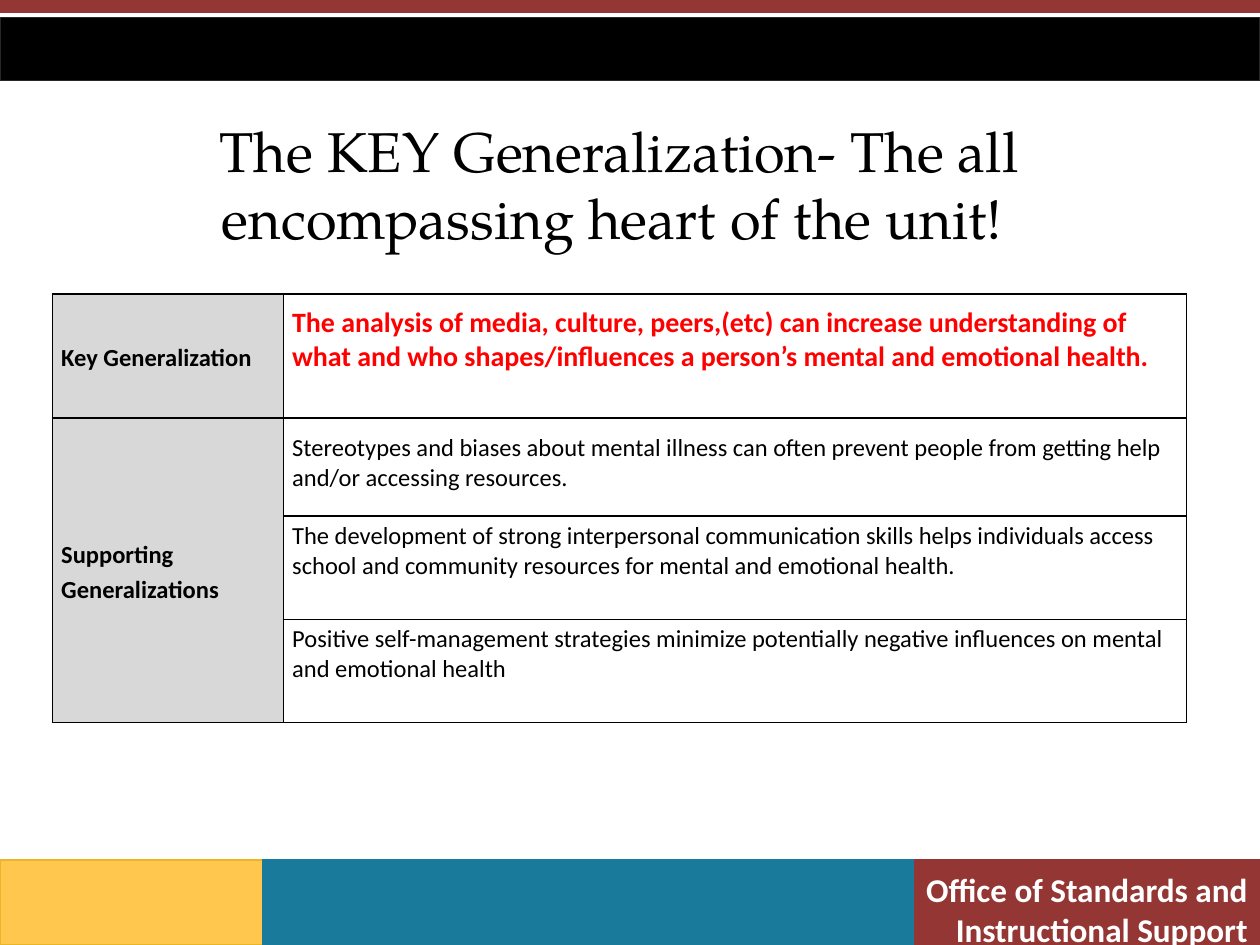
from dataclasses import dataclass
from lxml.etree import SubElement
from pptx import Presentation
from pptx.dml.color import RGBColor
from pptx.enum.shapes import MSO_SHAPE
from pptx.enum.text import MSO_ANCHOR, PP_ALIGN
from pptx.oxml.ns import qn
from pptx.util import Pt


@dataclass(frozen=True)
class Theme:
    black: str = "000000"
    white: str = "FFFFFF"
    edge: str = "272727"
    red: str = "943634"
    gold: str = "FFC74E"
    amber: str = "EAB629"
    teal: str = "197A9B"
    gray: str = "D8D8D8"
    alert: str = "FF0000"
    sans: str = "Calibri"
    serif: str = "TeX Gyre Pagella"
    title: int = 32
    foot: int = 19
    key: int = 16
    body: int = 14


theme = Theme()


def write(frame, text, size=theme.body, color=theme.black, font=theme.sans,
          bold=False, align=PP_ALIGN.LEFT, space=1.0):
    frame.word_wrap = True
    for i, line in enumerate(text.split("\n")):
        para = frame.paragraphs[0] if i == 0 else frame.add_paragraph()
        para.alignment = align
        para.line_spacing = space
        run = para.add_run()
        run.text = line
        run.font.size = Pt(size)
        run.font.name = font
        run.font.bold = bold
        run.font.color.rgb = RGBColor.from_string(color)


def outline(cell):
    props = cell._tc.get_or_add_tcPr()
    for i, side in enumerate(("lnL", "lnR", "lnT", "lnB")):
        line = props.makeelement(qn(f"a:{side}"), {"w": str(Pt(1))})
        fill = SubElement(line, qn("a:solidFill"))
        SubElement(fill, qn("a:srgbClr"), val=theme.black)
        props.insert(i, line)


deck = Presentation()
deck.slide_width, deck.slide_height = Pt(720), Pt(540)
slide = deck.slides.add_slide(deck.slide_layouts[6])
shapes = slide.shapes

bands = [
    (522, 491.5, 198, 48.5, theme.red, theme.red),
    (0, 491.5, 150, 48.5, theme.gold, theme.amber),
    (150, 491.5, 372, 48.5, theme.teal, theme.teal),
    (0, 0, 720, 7, theme.red, theme.red),
    (0, 10, 720, 36, theme.black, theme.edge),
]
for *place, fill, line in bands:
    band = shapes.add_shape(MSO_SHAPE.RECTANGLE, *map(Pt, place))
    band.shadow.inherit = False
    band.fill.solid()
    band.fill.fore_color.rgb = RGBColor.from_string(fill)
    band.line.color.rgb = RGBColor.from_string(line)
    band.line.width = Pt(0.75)

foot = shapes.add_textbox(Pt(246), Pt(491.5), Pt(474), Pt(48.5)).text_frame
foot.margin_top = Pt(5.5)
write(foot, "Office of Standards and\nInstructional Support", size=theme.foot,
      color=theme.white, bold=True, align=PP_ALIGN.RIGHT)

title = shapes.add_textbox(Pt(30), Pt(60), Pt(648), Pt(90)).text_frame
title.vertical_anchor = MSO_ANCHOR.MIDDLE
write(title, "The KEY Generalization- The all encompassing heart of the unit! ",
      size=theme.title, font=theme.serif, align=PP_ALIGN.CENTER)

rows = [
    (71, 6.5, "The analysis of media, culture, peers,(etc) can increase understanding "
     "of what and who shapes/influences a person’s mental and emotional health."),
    (56, 8.5, "Stereotypes and biases about mental illness can often prevent people "
     "from getting help and/or accessing resources."),
    (59, 3, "The development of strong interpersonal communication skills helps "
     "individuals access school and community resources for mental and emotional health."),
    (59, 3, "Positive self-management strategies minimize potentially negative "
     "influences on mental and emotional health"),
]
high = sum(row[0] for row in rows)
table = shapes.add_table(len(rows), 2, Pt(30), Pt(168), Pt(648), Pt(high)).table
table.first_row = table.horz_banding = False
table.columns[0].width, table.columns[1].width = Pt(132), Pt(516)
table.cell(1, 0).merge(table.cell(3, 0))

for i, (tall, top, text) in enumerate(rows):
    table.rows[i].height = Pt(tall)
    for cell in table.rows[i].cells:
        cell.margin_left = cell.margin_right = Pt(5)
        cell.margin_top = cell.margin_bottom = Pt(3)
        cell.fill.background()
        outline(cell)
    cell = table.cell(i, 1)
    cell.margin_top = Pt(top)
    cell.vertical_anchor = MSO_ANCHOR.TOP
    look = {"size": theme.key, "color": theme.alert, "bold": True} if i == 0 else {}
    write(cell.text_frame, text, **look)

for i, text in enumerate(("Key Generalization", "Supporting Generalizations")):
    cell = table.cell(i, 0)
    cell.vertical_anchor = MSO_ANCHOR.MIDDLE
    cell.fill.solid()
    cell.fill.fore_color.rgb = RGBColor.from_string(theme.gray)
    write(cell.text_frame, text, bold=True, space=1.15)

deck.save("out.pptx")
